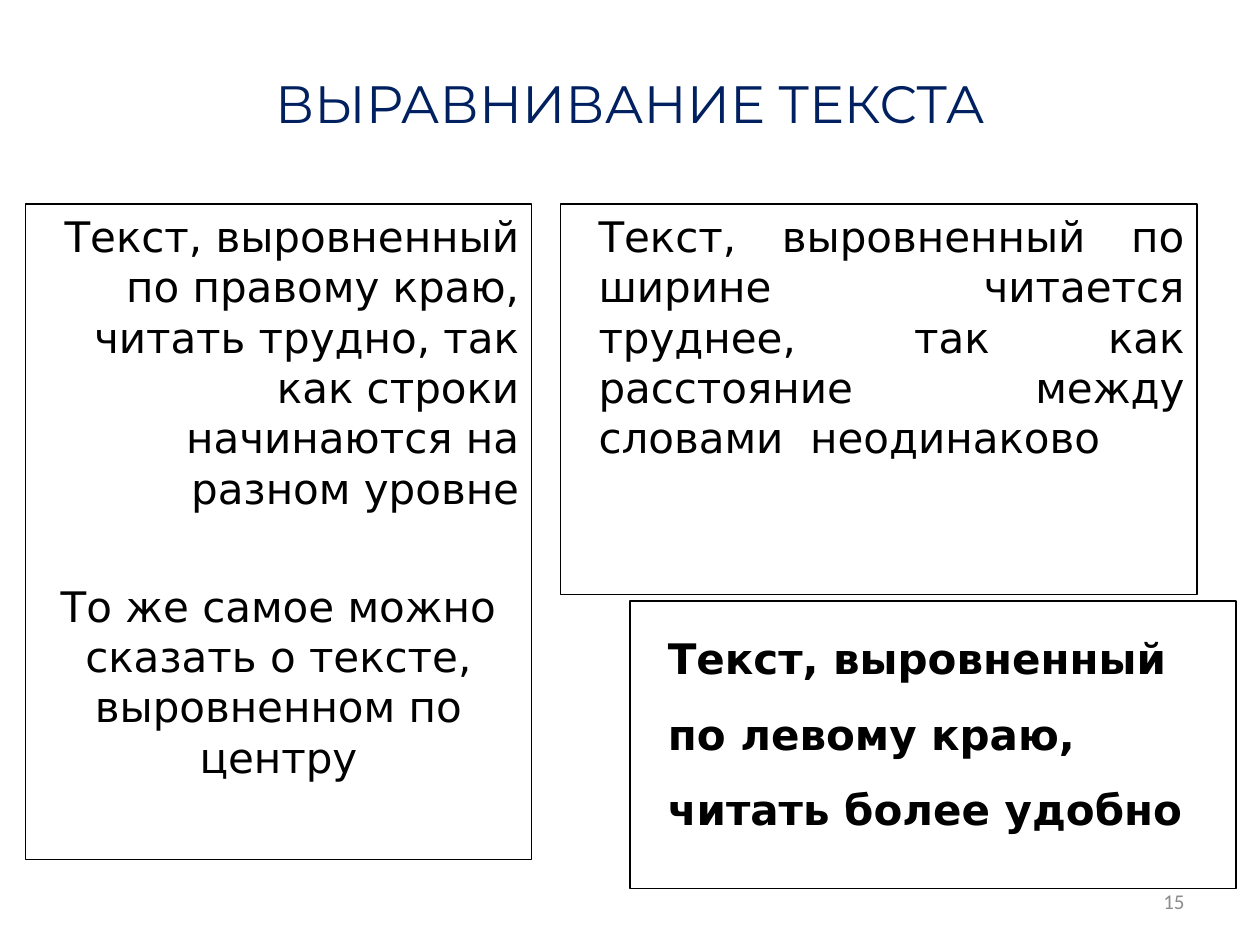
"""Build a slide that compares four ways to align text."""
from pptx import Presentation
from pptx.dml.color import RGBColor
from pptx.enum.shapes import MSO_SHAPE
from pptx.enum.text import MSO_ANCHOR, PP_ALIGN
from pptx.util import Inches, Pt

NAVY = RGBColor(0x00, 0x20, 0x60)
BLACK = RGBColor(0x00, 0x00, 0x00)
GRAY = RGBColor(0x8C, 0x8C, 0x8C)


class Deck:
    def __init__(self):
        self.prs = Presentation()
        self.prs.slide_width, self.prs.slide_height = Inches(10), Inches(7.5)
        self.slide = self.prs.slides.add_slide(self.prs.slide_layouts[5])
        self.body = {"name": "DejaVu Sans", "size": Pt(24), "bold": False}

    def place(self, shape, box):
        for key, val in zip(("left", "top", "width", "height"), box):
            setattr(shape, key, Inches(val))

    def fill_text(self, shape, items, font, color, anchor):
        frame = shape.text_frame
        frame.word_wrap = True
        frame.vertical_anchor = anchor
        for num, (text, form) in enumerate(items):
            para = frame.add_paragraph() if num else frame.paragraphs[0]
            for key, val in form.items():
                setattr(para, key, val)
            run = para.add_run()
            run.text = text
            for key, val in font.items():
                setattr(run.font, key, val)
            run.font.color.rgb = color

    def title(self, text, box):
        shape = self.slide.shapes.title
        self.place(shape, box)
        font = {"name": "Montserrat", "size": Pt(30)}
        form = {"alignment": PP_ALIGN.CENTER}
        self.fill_text(shape, [(text, form)], font, NAVY, MSO_ANCHOR.MIDDLE)

    def panel(self, box, items, indent=0, **font):
        shape = self.slide.shapes.add_shape(
            MSO_SHAPE.RECTANGLE, *map(Inches, box))
        shape.shadow.inherit = False
        shape.fill.background()
        shape.line.color.rgb = BLACK
        shape.line.width = Pt(0.75)
        shape.text_frame.margin_left = Inches(0.1 + indent)
        self.fill_text(
            shape, items, {**self.body, **font}, BLACK, MSO_ANCHOR.TOP)

    def number(self, text, box):
        shape = self.slide.shapes.add_textbox(*map(Inches, box))
        font = {"name": "Calibri", "size": Pt(12)}
        form = {"alignment": PP_ALIGN.RIGHT}
        self.fill_text(shape, [(text, form)], font, GRAY, MSO_ANCHOR.MIDDLE)


def main():
    deck = Deck()
    deck.title("ВЫРАВНИВАНИЕ ТЕКСТА", (0.5, 0.3, 9, 1.03))
    deck.panel((5, 4.77, 4.81, 2.28), [
        ("Текст, выровненный по левому краю, читать более удобно",
         {"alignment": PP_ALIGN.LEFT, "line_spacing": 1.5}),
    ], indent=0.2, bold=True)
    deck.panel((4.45, 1.62, 5.05, 3.1), [
        ("Текст, выровненный по ширине читается труднее, так как "
         "расстояние между словами  неодинаково",
         {"alignment": PP_ALIGN.JUSTIFY, "space_before": Pt(4.8)}),
    ], indent=0.2)
    deck.panel((0.2, 1.62, 4.02, 5.2), [
        ("Текст, выровненный по правому краю, читать трудно, так как "
         "строки начинаются на разном уровне",
         {"alignment": PP_ALIGN.RIGHT, "space_before": Pt(4.8)}),
        ("То же самое можно сказать о тексте, выровненном по центру",
         {"alignment": PP_ALIGN.CENTER, "space_before": Pt(38.5)}),
    ])
    deck.number("15", (7.17, 6.95, 2.33, 0.4))
    deck.prs.save("out.pptx")


if __name__ == "__main__":
    main()
